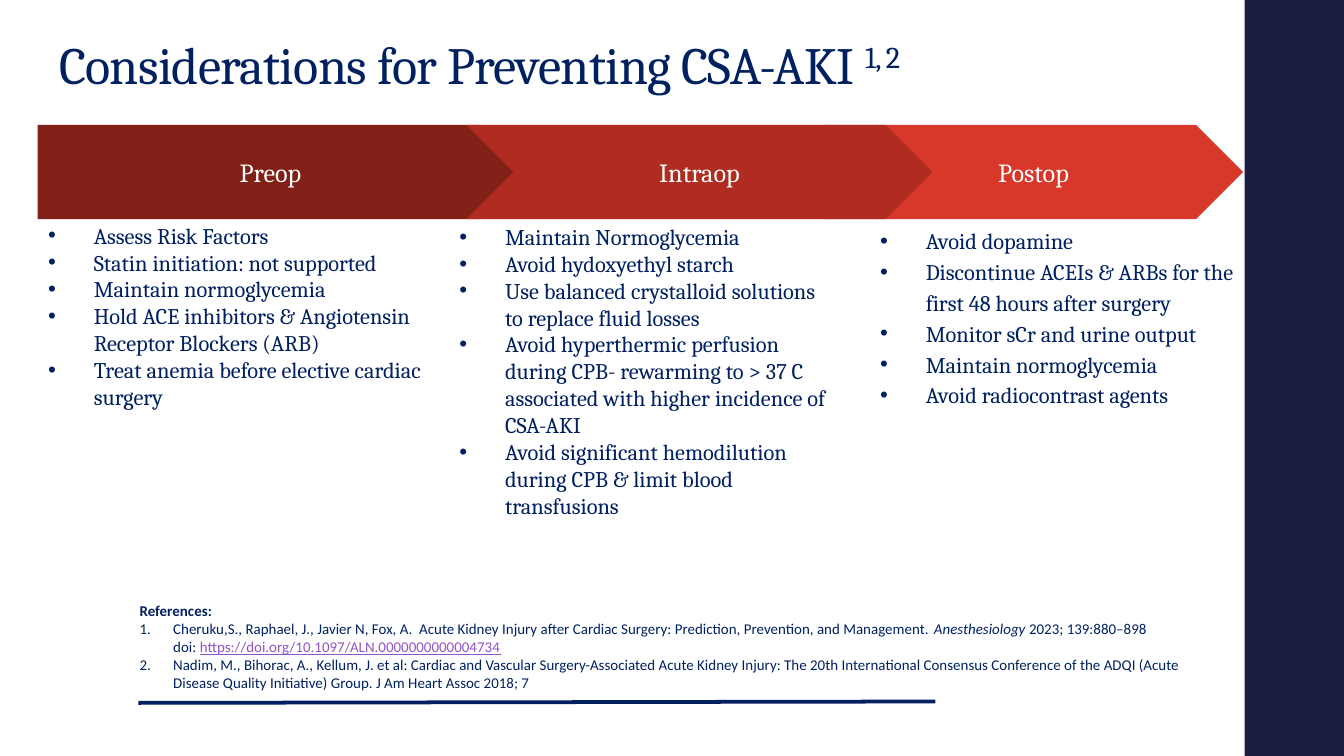
from dataclasses import dataclass

from lxml import etree
from pptx import Presentation
from pptx.dml.color import RGBColor
from pptx.enum import shapes, text
from pptx.oxml import ns
from pptx.util import Inches, Pt


@dataclass(frozen=True)
class Theme:
    navy: str = "002060"
    side: str = "1B1E3E"
    white: str = "FFFFFF"
    link: str = "9454C3"
    reds: tuple = ("802017", "B02C20", "D83829")
    serif: str = "Cambria"
    sans: str = "Calibri"
    mark: str = "Arial"
    title: int = 28
    stage: int = 14
    body: int = 12
    note: int = 8


THEME = Theme()
KINDS = shapes.MSO_SHAPE
HARD = chr(160)  # non-breaking space

PREOP = (
    "Assess Risk Factors",
    "Statin initiation: not supported",
    "Maintain normoglycemia",
    "Hold ACE inhibitors & Angiotensin Receptor Blockers (ARB)",
    "Treat anemia before elective cardiac surgery",
)
INTRAOP = (
    "Maintain Normoglycemia",
    "Avoid hydoxyethyl starch",
    "Use balanced crystalloid solutions to replace fluid losses",
    "Avoid hyperthermic perfusion during CPB- rewarming to > 37 C "
    "associated with higher incidence of CSA-AKI",
    "Avoid significant hemodilution during CPB & limit blood transfusions",
)
POSTOP = (
    "Avoid dopamine",
    "Discontinue ACEIs & ARBs for the first 48 hours after surgery",
    "Monitor sCr and urine output",
    "Maintain normoglycemia",
    "Avoid radiocontrast agents",
)
REFS = (
    (
        (f"Cheruku,S., Raphael,{HARD}J., Javier N, Fox, A.  Acute Kidney Injury "
         "after Cardiac Surgery: Prediction, Prevention, and "
         f"Management.{HARD}", {}),
        ("Anesthesiology", {"italic": True}),
        (f"{HARD}2023; 139:880–898 doi:{HARD}", {}),
        ("https://doi.org/10.1097/ALN.0000000000004734",
         {"color": THEME.link, "underline": True}),
    ),
    (
        ("Nadim, M., Bihorac, A., Kellum, J. et al: Cardiac and Vascular "
         "Surgery-Associated Acute Kidney Injury: The 20th International "
         "Consensus Conference of the ADQI (Acute Disease Quality Initiative) "
         "Group. J Am Heart Assoc 2018; 7", {}),
    ),
)


def add_run(para, words, size=THEME.body, face=THEME.serif, color=THEME.navy,
            bold=False, italic=False, underline=False, **attrs):
    """Add formatted text; attrs are raw run attributes such as baseline."""
    run = para.add_run()
    run.text = words
    font = run.font
    font.size, font.name = Pt(size), face
    font.bold, font.italic, font.underline = bold, italic, underline
    font.color.rgb = RGBColor.from_string(color)
    for name, value in attrs.items():
        run._r.get_or_add_rPr().set(name, str(value))


def add_mark(para, tag, left, hang, face, **attrs):
    """Give a paragraph a hanging bullet or number."""
    props = para._p.get_or_add_pPr()
    props.set("marL", str(Inches(left)))
    props.set("indent", str(-Inches(hang)))
    tint = etree.SubElement(props, ns.qn("a:buClr"))
    etree.SubElement(tint, ns.qn("a:srgbClr"), val=THEME.navy)
    etree.SubElement(props, ns.qn("a:buFont"), typeface=face)
    etree.SubElement(props, ns.qn(tag), **attrs)


def set_frame(frame, side, top, anchor=text.MSO_ANCHOR.TOP):
    frame.word_wrap = True
    frame.vertical_anchor = anchor
    frame.margin_left = frame.margin_right = Inches(side)
    frame.margin_top = frame.margin_bottom = Inches(top)


def add_block(slide, kind, color, left, top, width, height):
    block = slide.shapes.add_shape(
        kind, Inches(left), Inches(top), Inches(width), Inches(height))
    block.shadow.inherit = False
    block.fill.solid()
    block.fill.fore_color.rgb = RGBColor.from_string(color)
    block.line.fill.background()
    return block


def add_box(slide, left, top, width, height, inset):
    box = slide.shapes.add_textbox(
        Inches(left), Inches(top), Inches(width), Inches(height))
    set_frame(box.text_frame, 0.1, inset)
    return box.text_frame


def add_title(slide):
    title = slide.shapes.title
    title.left, title.top = Inches(0.37), Inches(0.11)
    title.width, title.height = Inches(9), Inches(0.64)
    frame = title.text_frame
    set_frame(frame, 0.07, 0.04, text.MSO_ANCHOR.BOTTOM)
    frame.auto_size = text.MSO_AUTO_SIZE.NONE
    para = frame.paragraphs[0]
    para.alignment = text.PP_ALIGN.LEFT
    para.line_spacing = 0.9
    style = {"size": THEME.title, "spc": -36}
    add_run(para, "Considerations for Preventing CSA-AKI ", **style)
    add_run(para, "1, 2", baseline=30000, **style)


def add_stage(slide, name, kind, color, left, width):
    arrow = add_block(slide, kind, color, left, 0.93, width, 0.7)
    arrow.adjustments[0] = 0.5
    set_frame(arrow.text_frame, 0.1, 0.1, text.MSO_ANCHOR.MIDDLE)
    para = arrow.text_frame.paragraphs[0]
    para.alignment = text.PP_ALIGN.CENTER
    add_run(para, name, size=THEME.stage, color=THEME.white)


def add_list(slide, items, left, top, width, height, spacing=1.0):
    frame = add_box(slide, left, top, width, height, 0.1)
    for i, item in enumerate(items):
        para = frame.add_paragraph() if i else frame.paragraphs[0]
        add_mark(para, "a:buChar", 0.5, 0.34, THEME.mark, char="•")
        para.line_spacing = spacing
        add_run(para, item)


def add_refs(slide):
    frame = add_box(slide, 0.94, 4.43, 8.12, 0.77, 0.05)
    frame.auto_size = text.MSO_AUTO_SIZE.SHAPE_TO_FIT_TEXT
    style = {"size": THEME.note, "face": THEME.sans}
    add_run(frame.paragraphs[0], "References:", bold=True, **style)
    for ref in REFS:
        para = frame.add_paragraph()
        add_mark(para, "a:buAutoNum", 0.25, 0.25, THEME.sans,
                 type="arabicPeriod")
        for words, look in ref:
            add_run(para, words, **style, **look)


def add_rule(slide):
    rule = slide.shapes.add_connector(
        shapes.MSO_CONNECTOR.STRAIGHT,
        Inches(1.03), Inches(5.23), Inches(6.96), Inches(5.22))
    rule.line.color.rgb = RGBColor.from_string(THEME.navy)
    rule.line.width = Pt(2)
    etree.SubElement(rule._element.spPr, ns.qn("a:effectLst"))


def main():
    deck = Presentation()
    deck.slide_width = Inches(10)
    deck.slide_height = deck.slide_width * 9 // 16
    slide = deck.slides.add_slide(deck.slide_layouts[5])

    add_block(slide, KINDS.RECTANGLE, THEME.side,
              9.26, 0, 0.75, deck.slide_height.inches)
    add_rule(slide)
    add_title(slide)

    first, second, third = THEME.reds
    add_stage(slide, "Postop", KINDS.CHEVRON, third, 6.13, 3.12)
    add_list(slide, POSTOP, 6.29, 1.56, 3, 2.73, spacing=1.15)
    add_stage(slide, "Preop", KINDS.PENTAGON, first, 0.28, 3.64)
    add_list(slide, PREOP, 0.1, 1.55, 3.14, 2.72)
    add_stage(slide, "Intraop", KINDS.CHEVRON, second, 3.47, 3.47)
    add_list(slide, INTRAOP, 3.16, 1.56, 3.14, 3.08)
    add_refs(slide)
    deck.save("out.pptx")


if __name__ == "__main__":
    main()
